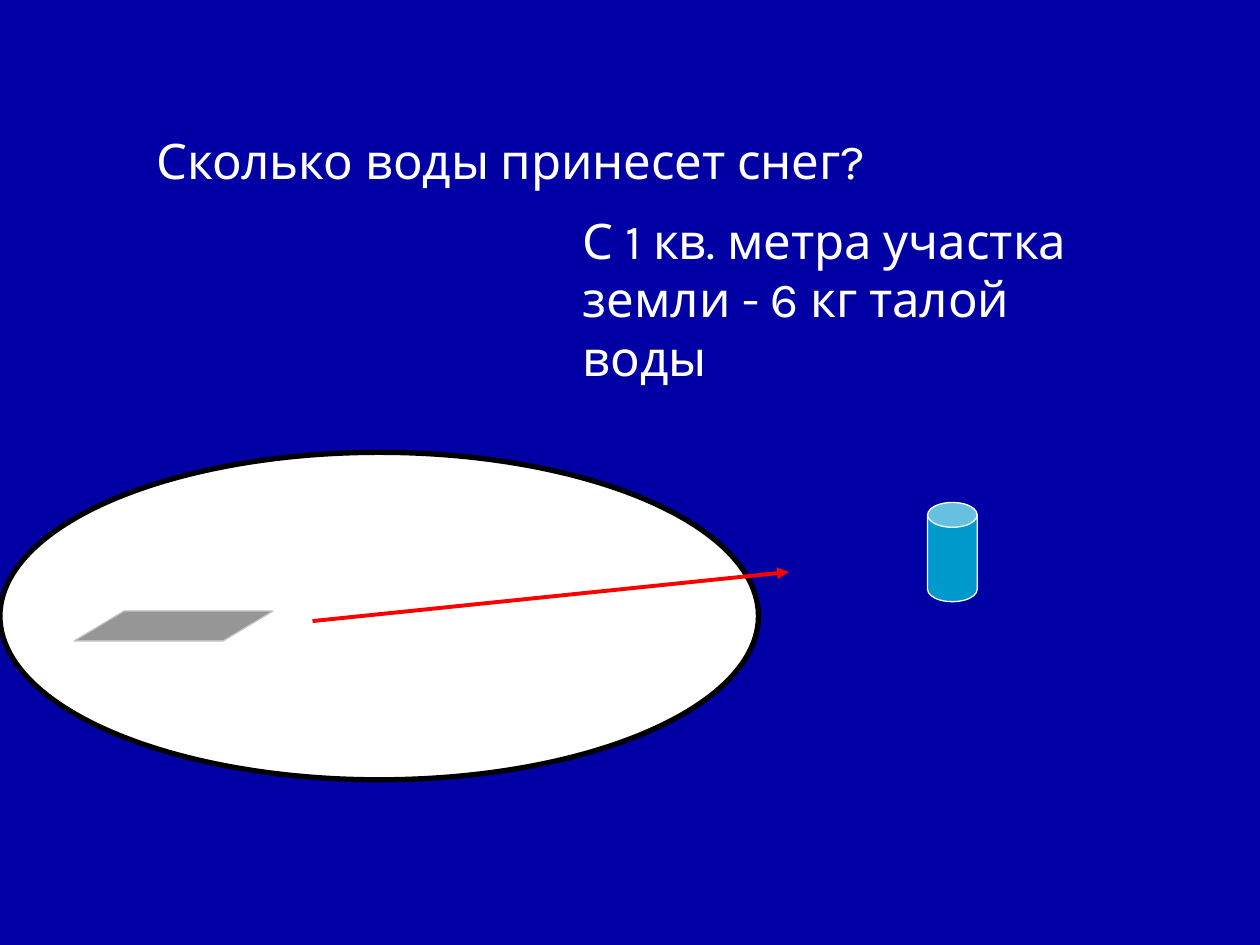
from lxml import etree
from pptx import Presentation
from pptx import util as u
from pptx.dml import color
from pptx.enum import shapes, text
from pptx.oxml import ns

BOX = {"word_wrap": True, "auto_size": text.MSO_AUTO_SIZE.SHAPE_TO_FIT_TEXT}
FONT = {"name": "Karla", "size": u.Pt(28)}


def rgb(value):
    return color.RGBColor.from_string(value)


def lengths(values):
    return [u.Cm(v) for v in values]


def set_line(line, hex_color, width):
    line.color.rgb = rgb(hex_color)
    line.width = u.Pt(width)


def add_text(s, box, words):
    tf = s.shapes.add_textbox(*lengths(box)).text_frame
    for name, value in BOX.items():
        setattr(tf, name, value)
    r = tf.paragraphs[0].add_run()
    r.text = words
    for name, value in FONT.items():
        setattr(r.font, name, value)
    r.font.color.rgb = rgb("FFFFFF")


def add_shape(s, kind, box, fill, line, width=0.75, adjust=None):
    sp = s.shapes.add_shape(kind, *lengths(box))
    sp.shadow.inherit = False
    sp.fill.solid()
    sp.fill.fore_color.rgb = rgb(fill)
    set_line(sp.line, line, width)
    if adjust is not None:
        sp.adjustments[0] = adjust


def add_arrow(s, ends, hex_color, width):
    arrow = s.shapes.add_connector(shapes.MSO_CONNECTOR.STRAIGHT, *lengths(ends))
    set_line(arrow.line, hex_color, width)
    sp_pr = arrow.line._get_or_add_ln().getparent()
    etree.SubElement(sp_pr.find(ns.qn("a:ln")), ns.qn("a:tailEnd"), type="triangle")
    etree.SubElement(sp_pr, ns.qn("a:effectLst"))


def main():
    prs = Presentation()
    prs.slide_width, prs.slide_height = lengths((25.4, 19.05))
    s = prs.slides.add_slide(prs.slide_layouts[6])
    s.background.fill.solid()
    s.background.fill.fore_color.rgb = rgb("0000A4")

    kind = shapes.MSO_SHAPE
    add_text(s, (2.9, 2.51, 21, 1.45), "Сколько воды принесет снег?")
    add_shape(s, kind.OVAL, (0, 9.12, 15.29, 6.6), "FFFFFF", "000000", width=3)
    add_shape(s, kind.PARALLELOGRAM, (1.5, 12.32, 4, 0.6), "969696", "C0C0C0", adjust=1.67)
    add_arrow(s, (6.3, 12.52, 15.9, 11.53), "FF0000", 2.25)
    add_shape(s, kind.CAN, (18.7, 10.13, 1, 2), "0099CC", "FFFFFF", adjust=0.5)
    add_text(s, (11.5, 4.11, 11.7, 2.64), "С 1 кв. метра участка земли - 6 кг талой воды")
    prs.save("out.pptx")


if __name__ == "__main__":
    main()
